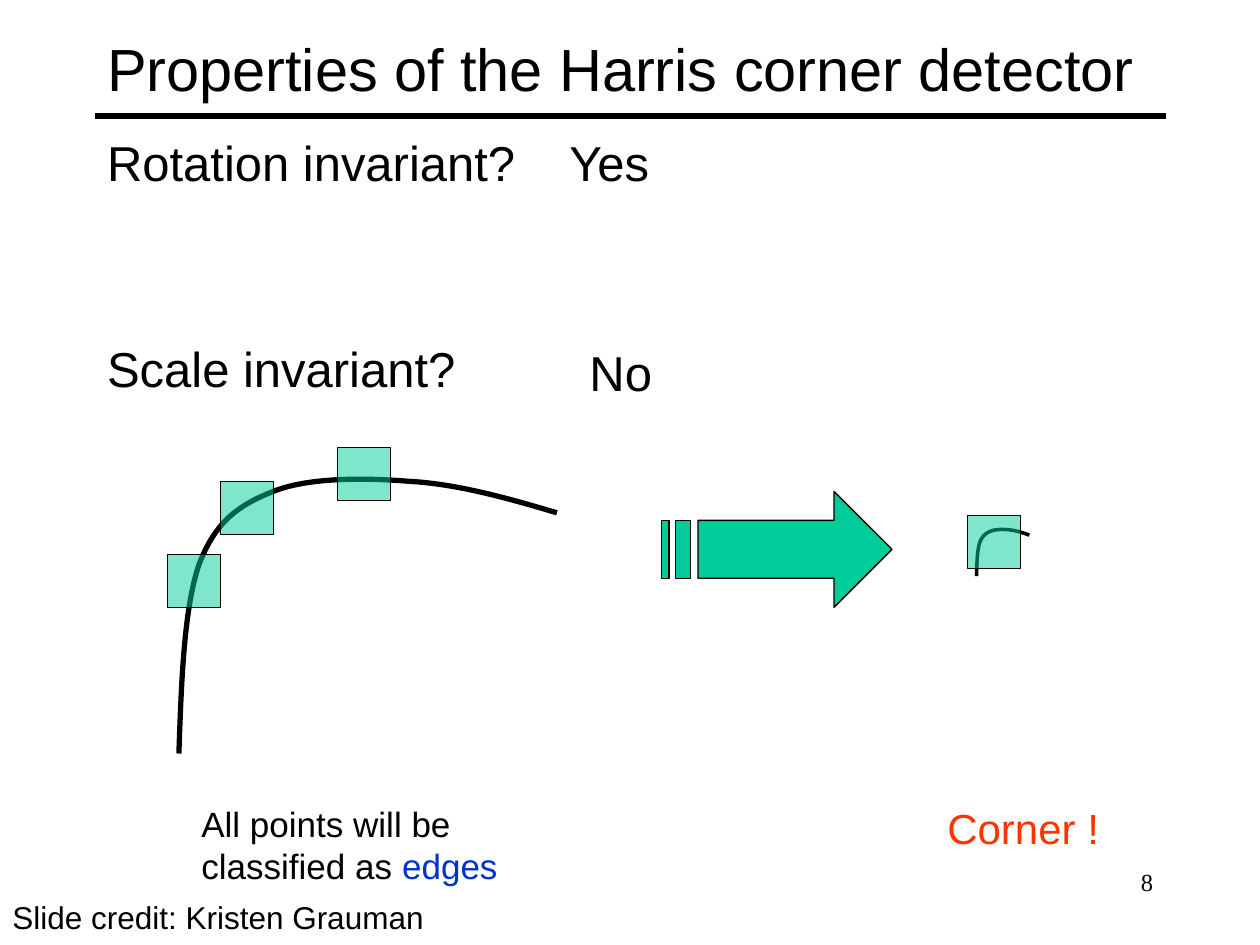
from lxml.etree import SubElement
from pptx import Presentation
from pptx.dml.color import RGBColor
from pptx.enum.shapes import MSO_CONNECTOR as Connector, MSO_SHAPE as Shape
from pptx.enum.text import MSO_ANCHOR as Anchor, MSO_AUTO_SIZE as AutoSize, PP_ALIGN as Align
from pptx.oxml.ns import qn
from pptx.util import Inches, Pt

COLORS = {"black": "000000", "green": "00CC99", "blue": "0033CC", "red": "FF3300"}
RGB = {name: RGBColor.from_string(value) for name, value in COLORS.items()}


def write(para, text, size, color="black", font="Arial"):
    span = para.add_run()
    span.text = text
    span.font.color.rgb = RGB[color]
    for key, value in {"name": font, "size": Pt(size)}.items():
        setattr(span.font, key, value)


def finish(shape, width, fill=None, alpha=None):
    """Give a shape its black outline and its fill, with an optional opacity in percent."""
    shape.shadow.inherit = False
    shape.line.color.rgb = RGB["black"]
    shape.line.width = Pt(width)
    if fill is None:
        shape.fill.background()
        return
    shape.fill.solid()
    shape.fill.fore_color.rgb = RGB[fill]
    if alpha:
        color = shape.fill._xPr.find(".//" + qn("a:srgbClr"))
        SubElement(color, qn("a:alpha"), val=str(alpha * 1000))


deck = Presentation()
deck.slide_width, deck.slide_height = Inches(10), Inches(7.5)
page = deck.slides.add_slide(deck.slide_layouts[1])
shapes = page.shapes

# Title and its rule
title, body = shapes.title, page.placeholders[1]
for holder, top, height, anchor in [(title, 0.08, 0.92, Anchor.MIDDLE), (body, 1, 2.5, Anchor.TOP)]:
    holder.left, holder.top = Inches(0.75), Inches(top)
    holder.width, holder.height = Inches(8.5), Inches(height)
    frame_format = {"auto_size": AutoSize.NONE, "vertical_anchor": anchor, "word_wrap": True}
    for key, value in frame_format.items():
        setattr(holder.text_frame, key, value)
heading = title.text_frame.paragraphs[0]
heading.alignment = Align.LEFT
write(heading, "Properties of the Harris corner detector", 34)

rule = shapes.add_connector(Connector.STRAIGHT, Inches(0.75), Inches(0.92), Inches(9.25), Inches(0.92))
rule.line.color.rgb = RGB["black"]
rule.line.width = Pt(3)
SubElement(rule._element.spPr, qn("a:effectLst"))

# Questions
questions = [("Rotation invariant?", 0), ("Scale invariant?", 84.3)]
for index, (question, space) in enumerate(questions):
    para = body.text_frame.add_paragraph() if index else body.text_frame.paragraphs[0]
    properties = para._p.get_or_add_pPr()
    properties.set("marL", str(Inches(0.38)))
    properties.set("indent", str(-Inches(0.38)))
    SubElement(properties, qn("a:buNone"))
    para.space_before = Pt(space)
    write(para, question, 28)

# The same curve at two scales: a start point, then three points for each Bezier piece
curve = [(0, 2.19), (0.02, 1.62), (0.04, 1.04), (0.16, 0.69), (0.29, 0.35), (0.47, 0.22),
         (0.75, 0.11), (1.02, 0), (1.46, 0), (1.83, 0.03), (2.2, 0.05), (2.6, 0.16), (3, 0.28)]

# Left, top, horizontal and vertical scale, line width, window corners
scenes = [
    (1.42, 3.79, 1, 1, 3, [(1.33, 4.4), (1.75, 3.82), (2.68, 3.55)]),
    (7.75, 4.2, 0.14, 0.17, 2, [(7.68, 4.09)]),
]
groups = []
for left, top, scale_x, scale_y, width, windows in scenes:
    group = shapes.add_group_shape()
    groups.append(group.shapes)
    points = [(Inches(left + x * scale_x), Inches(top + y * scale_y)) for x, y in curve]
    builder = group.shapes.build_freeform(*points[0])
    builder.add_line_segments(points[1:], close=False)
    arc = builder.convert_to_shape()
    finish(arc, width)
    segments = list(arc._element.iter(qn("a:lnTo")))
    outline = segments[0].getparent()
    for first in range(0, len(segments), 3):
        bezier = SubElement(outline, qn("a:cubicBezTo"))
        for segment in segments[first:first + 3]:
            bezier.append(segment[0])
            outline.remove(segment)
    for x, y in windows:
        window = group.shapes.add_shape(Shape.RECTANGLE, Inches(x), Inches(y), Inches(0.42), Inches(0.42))
        finish(window, 0.75, "green", 50)
edge_group, corner_group = groups

# Striped arrow
arrow_parts = [[(6.62, 3.9), (6.62, 4.13), (5.54, 4.13), (5.54, 4.59),
                (6.62, 4.59), (6.62, 4.82), (7.08, 4.36)]]
for left, right in [(5.36, 5.48), (5.25, 5.31)]:
    arrow_parts.append([(left, 4.13), (left, 4.59), (right, 4.59), (right, 4.13)])
builder = None
for part in arrow_parts:
    points = [(Inches(x), Inches(y)) for x, y in part]
    if builder is None:
        builder = corner_group.build_freeform(*points[0])
    else:
        builder.move_to(*points[0])
    builder.add_line_segments(points[1:], close=True)
finish(builder.convert_to_shape(), 0.75, "green")

# Captions, answers, credit and page number
labels = [
    (edge_group, (1.5, 6.32, 2.83, 0.77), [("All points will be classified as ", 20), ("edges", 20, "blue")]),
    (corner_group, (7.42, 6.32, 1.5, 0.5), [("Corner !", 24, "red")]),
    (shapes, (4.42, 1, 2.08, 0.57), [("Yes", 28)]),
    (shapes, (4.58, 2.67, 2.08, 0.57), [("No", 28)]),
    (shapes, (0, 7.08, 5.25, 0.42), [("Slide credit: Kristen Grauman", 18)]),
    (shapes, (7.17, 6.83, 2.08, 0.5), [("8", 14, "black", "Times New Roman")]),
]
for parent, place, spans in labels:
    box = parent.add_textbox(*map(Inches, place))
    box.text_frame.word_wrap = True
    para = box.text_frame.paragraphs[0]
    for span in spans:
        write(para, *span)
para.alignment = Align.RIGHT

deck.save("out.pptx")
